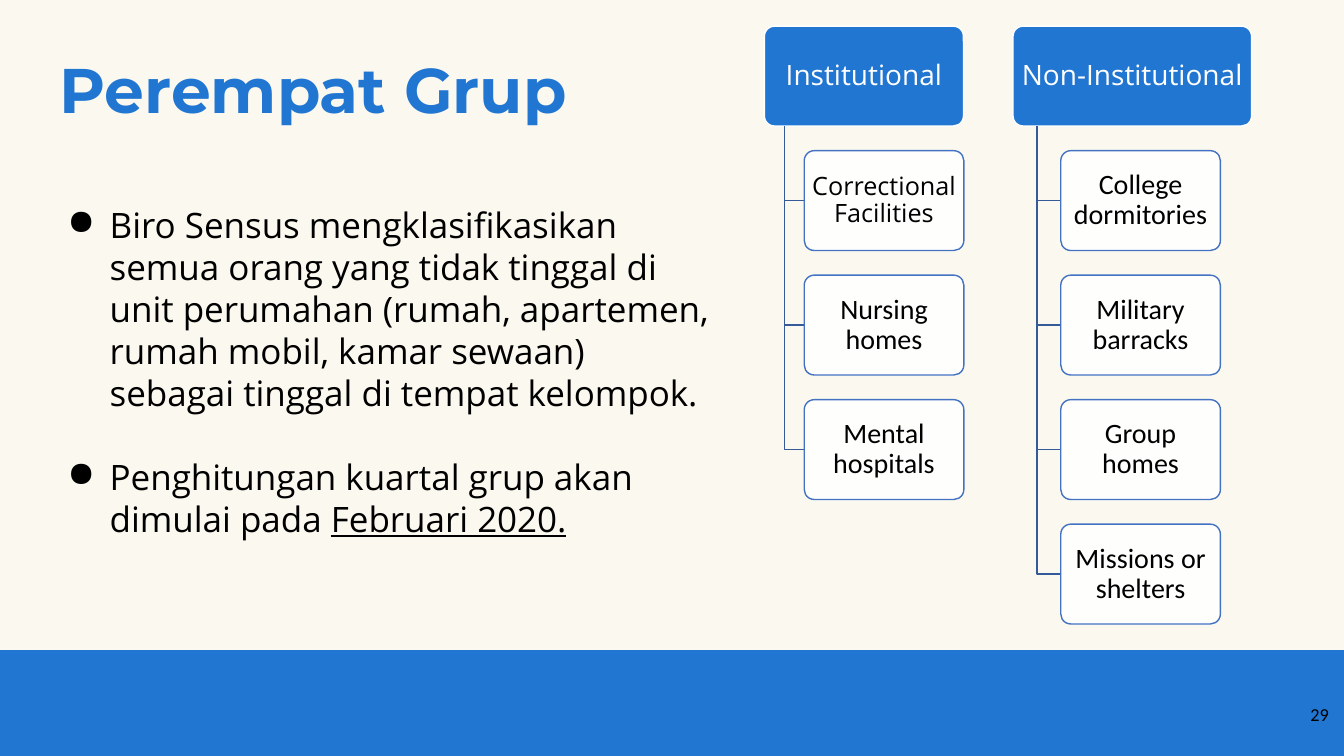
from lxml import etree
from pptx import Presentation, util as u
from pptx.dml.color import RGBColor
from pptx.enum import shapes, text
from pptx.oxml import ns

COLOURS = {"paper": "FBF9EF", "blue": "2176D2", "white": "FFFFFF",
           "black": "000000", "outline": "4372C3", "branch": "345A99"}
COLUMNS, ROWS = 160, 90
BOX_ROWS, ROW_PITCH, FIRST_ROW = 11.88, 14.82, 3.12
CHILD_COLUMNS = 19
CENTRE, RIGHT = text.PP_ALIGN.CENTER, text.PP_ALIGN.RIGHT

TREES = [
    (91, 23.7, "Institutional",
     ["Correctional Facilities", "Nursing homes", "Mental hospitals"]),
    (120.6, 28.4, "Non-Institutional",
     ["College dormitories", "Military barracks", "Group homes", "Missions or shelters"]),
]
BULLETS = [
    [("Biro Sensus mengklasifikasikan semua orang yang tidak tinggal di unit perumahan "
      "(rumah, apartemen, rumah mobil, kamar sewaan) sebagai tinggal di tempat kelompok.", False)],
    [("Penghitungan kuartal grup akan dimulai pada ", False), ("Februari 2020.", True)],
]


def colour(name):
    return RGBColor.from_string(COLOURS[name])


class Deck:
    def __init__(self):
        self.presentation = Presentation()
        self.presentation.slide_width = u.Inches(13.33)
        self.presentation.slide_height = u.Inches(7.5)
        self.slide = self.presentation.slides.add_slide(self.presentation.slide_layouts[6])
        self.slide.background.fill.solid()
        self.slide.background.fill.fore_color.rgb = colour("paper")

    def place(self, left, top, width, height):
        """Turn grid columns and rows into slide lengths."""
        column = self.presentation.slide_width / COLUMNS
        row = self.presentation.slide_height / ROWS
        return [u.Emu(round(length)) for length in
                (left * column, top * row, width * column, height * row)]

    def style(self, paragraph, size, font, tint="black", bold=False):
        paragraph.font.size = u.Pt(size)
        paragraph.font.name = font
        paragraph.font.bold = bold
        paragraph.font.color.rgb = colour(tint)

    def band(self, *area):
        shape = self.slide.shapes.add_shape(shapes.MSO_SHAPE.RECTANGLE, *self.place(*area))
        shape.shadow.inherit = False
        shape.fill.solid()
        shape.fill.fore_color.rgb = colour("blue")
        shape.line.fill.background()

    def text_box(self, *area):
        frame = self.slide.shapes.add_textbox(*self.place(*area)).text_frame
        frame.word_wrap = True
        return frame

    def label(self, area, words, size, font, align=None, **look):
        paragraph = self.text_box(*area).paragraphs[0]
        paragraph.text = words
        paragraph.alignment = align
        self.style(paragraph, size, font, **look)

    def bullets(self, area, items, size, font):
        frame = self.text_box(*area)
        for index, runs in enumerate(items):
            paragraph = frame.add_paragraph() if index else frame.paragraphs[0]
            properties = paragraph._p.get_or_add_pPr()
            properties.set("marL", str(u.Inches(0.5)))
            properties.set("indent", str(u.Inches(-0.42)))
            tint = etree.SubElement(properties, ns.qn("a:buClr"))
            etree.SubElement(tint, ns.qn("a:srgbClr"), val=COLOURS["black"])
            etree.SubElement(properties, ns.qn("a:buChar"), char="●")
            if index:
                paragraph.space_before = u.Pt(30)
            for words, underlined in runs:
                run = paragraph.add_run()
                run.text = words
                if underlined:
                    run.font.underline = True
            self.style(paragraph, size, font)

    def node(self, area, words, fill, line, size, font, tint, opacity=100):
        shape = self.slide.shapes.add_shape(shapes.MSO_SHAPE.ROUNDED_RECTANGLE,
                                            *self.place(*area))
        shape.adjustments[0] = 0.1
        shape.shadow.inherit = False
        shape.fill.solid()
        shape.fill.fore_color.rgb = colour(fill)
        if opacity < 100:
            solid = shape.fill._xPr.find(ns.qn("a:solidFill"))
            etree.SubElement(solid[0], ns.qn("a:alpha"), val=str(opacity * 1000))
        shape.line.color.rgb = colour(line)
        shape.line.width = u.Pt(1)
        frame = shape.text_frame
        frame.word_wrap = True
        frame.vertical_anchor = text.MSO_ANCHOR.MIDDLE
        frame.margin_left = frame.margin_right = u.Inches(0.03)
        frame.margin_top = frame.margin_bottom = u.Inches(0.03)
        paragraph = frame.paragraphs[0]
        paragraph.text = words
        paragraph.alignment = CENTRE
        paragraph.line_spacing = 0.9
        self.style(paragraph, size, font, tint)

    def elbow(self, left, top, width, height):
        """Draw a branch that runs down, then right."""
        x, y, across, down = self.place(left, top, width, height)
        builder = self.slide.shapes.build_freeform(x, y)
        builder.add_line_segments([(x, y + down), (x + across, y + down)], close=False)
        shape = builder.convert_to_shape()
        shape.shadow.inherit = False
        shape.fill.background()
        shape.line.color.rgb = colour("branch")
        shape.line.width = u.Pt(1)

    def tree(self, left, width, heading, children):
        """Draw a heading with its children hung one below another."""
        self.node((left, FIRST_ROW, width, BOX_ROWS), heading,
                  "blue", "white", 20, "Open Sans", "white")
        step = width / 10
        for level, child in enumerate(children, 1):
            self.elbow(left + step, FIRST_ROW + BOX_ROWS, step,
                       level * ROW_PITCH - BOX_ROWS / 2)
            size, font = (18, "Open Sans") if child == "Correctional Facilities" else (20, "Calibri")
            self.node((left + 2 * step, FIRST_ROW + level * ROW_PITCH, CHILD_COLUMNS, BOX_ROWS),
                      child, "white", "outline", size, font, "black", opacity=89)


def main():
    deck = Deck()
    deck.band(0, 77.4, COLUMNS, 12.6)
    deck.label((5.88, 5.4, 123.6, 10.3), "Perempat Grup", 45, "Montserrat",
               tint="blue", bold=True)
    for tree in TREES:
        deck.tree(*tree)
    deck.bullets((5.88, 23.64, 80.4, 46.7), BULLETS, 25, "Open Sans")
    deck.label((149.76, 83.16, 9.6, 6.84), "29", 13, "Calibri", RIGHT)
    deck.presentation.save("out.pptx")


if __name__ == "__main__":
    main()
